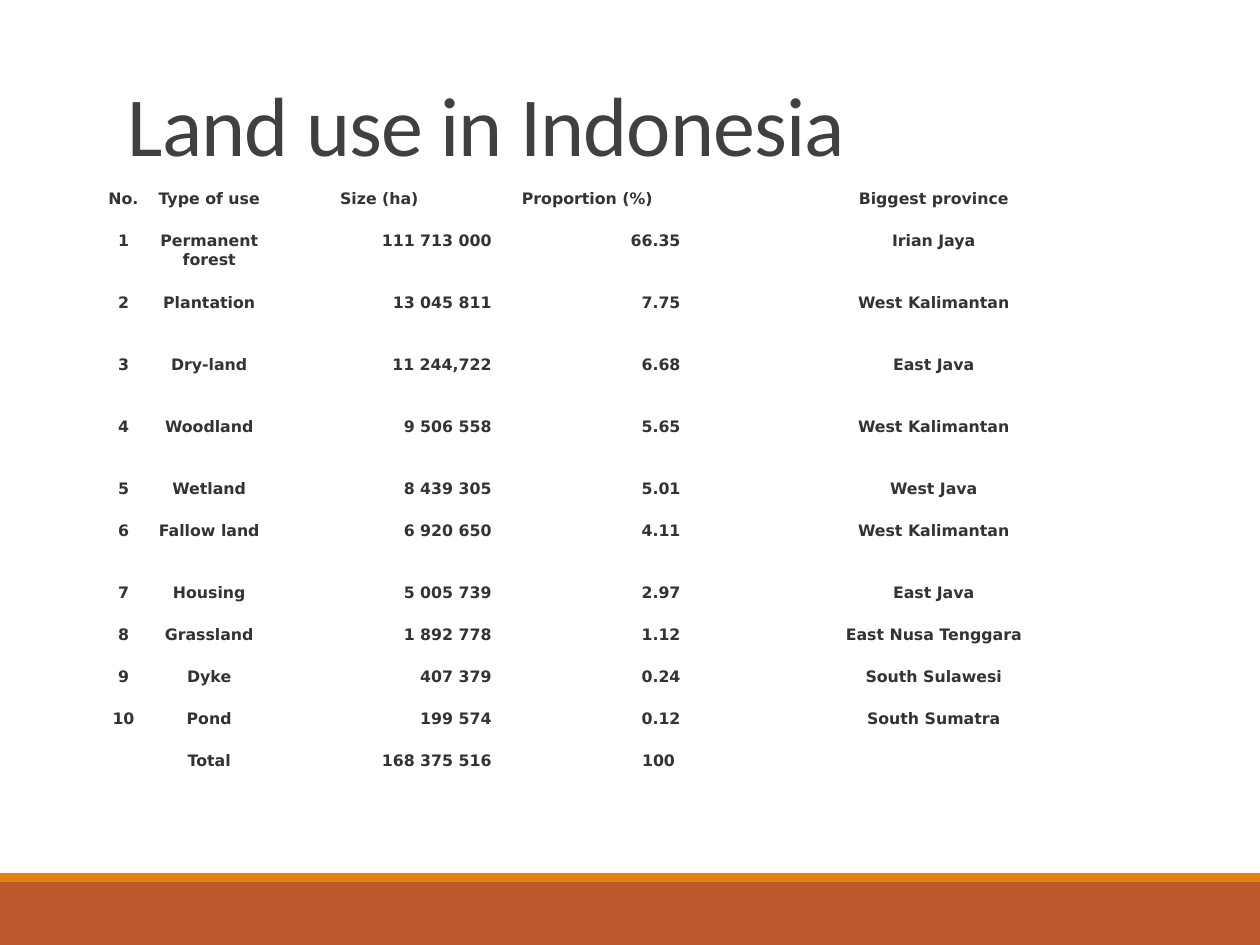
from dataclasses import dataclass

from pptx import Presentation
from pptx.dml.color import RGBColor
from pptx.enum.shapes import MSO_SHAPE
from pptx.enum.text import MSO_ANCHOR, PP_ALIGN
from pptx.util import Pt


@dataclass(frozen=True)
class Theme:
    title_font: str = "Calibri"
    table_font: str = "DejaVu Sans"
    title_size: float = 48
    table_size: float = 9
    title_color: str = "404040"
    table_color: str = "333333"
    cell_fill: str = "FFFFFF"
    band: str = "BD582C"
    stripe: str = "E48312"


THEME = Theme()
WIDTH, HEIGHT = 720, 540

HEADER = ("No.", "Type of use", "Size (ha)", "Proportion (%)", "Biggest province")
LAND_USE = [
    ("1", "Permanent forest", "111 713 000", "66.35", "Irian Jaya"),
    ("2", "Plantation", "13 045 811", "7.75", "West Kalimantan"),
    ("3", "Dry-land", "11 244,722", "6.68", "East Java"),
    ("4", "Woodland", "9 506 558", "5.65", "West Kalimantan"),
    ("5", "Wetland", "8 439 305", "5.01", "West Java"),
    ("6", "Fallow land", "6 920 650", "4.11", "West Kalimantan"),
    ("7", "Housing", "5 005 739", "2.97", "East Java"),
    ("8", "Grassland", "1 892 778", "1.12", "East Nusa Tenggara"),
    ("9", "Dyke", "407 379", "0.24", "South Sulawesi"),
    ("10", "Pond", "199 574", "0.12", "South Sumatra"),
    ("", "Total", "168 375 516", "100 ", ""),
]
COL_WIDTHS = (33.12, 64.8, 129.6, 108, 288)
NUMBER_COLS = (2, 3)
LOW_ROW, TALL_ROW = 24, 35.4
TALL_ROWS = (1, 2, 3, 4, 6, 11)
CELL_INSET = 0.72


def add_run(p, text, font, size, color, bold=False):
    r = p.add_run()
    r.text = text
    r.font.name = font
    r.font.size = Pt(size)
    r.font.bold = bold
    r.font.color.rgb = RGBColor.from_string(color)
    return r


def add_bar(s, top, height, color):
    sp = s.shapes.add_shape(MSO_SHAPE.RECTANGLE, 0, Pt(top), Pt(WIDTH), Pt(height))
    sp.shadow.inherit = False
    sp.fill.solid()
    sp.fill.fore_color.rgb = RGBColor.from_string(color)
    sp.line.fill.background()


def add_title(s, text):
    sp = s.shapes.add_textbox(Pt(66), Pt(-12), Pt(594), Pt(114.5))
    tf = sp.text_frame
    tf.word_wrap = True
    tf.vertical_anchor = MSO_ANCHOR.BOTTOM
    p = tf.paragraphs[0]
    p.line_spacing = 0.85
    r = add_run(p, text, THEME.title_font, THEME.title_size, THEME.title_color)
    r.font._element.set("spc", "-50")  # tighter letters, in 1/100 pt


def fill_cell(cell, text, align):
    cell.fill.solid()
    cell.fill.fore_color.rgb = RGBColor.from_string(THEME.cell_fill)
    cell.margin_left = cell.margin_right = Pt(CELL_INSET)
    cell.margin_top = cell.margin_bottom = Pt(CELL_INSET)
    p = cell.text_frame.paragraphs[0]
    p.alignment = align
    if text:
        add_run(p, text, THEME.table_font, THEME.table_size, THEME.table_color, bold=True)


def add_land_table(s):
    rows = [HEADER, *LAND_USE]
    heights = [TALL_ROW if i in TALL_ROWS else LOW_ROW for i in range(len(rows))]
    table = s.shapes.add_table(len(rows), len(HEADER), Pt(54), Pt(108),
                               Pt(sum(COL_WIDTHS)), Pt(sum(heights))).table
    table.first_row = table.horz_banding = False
    for col, width in zip(table.columns, COL_WIDTHS):
        col.width = Pt(width)
    for i, values in enumerate(rows):
        table.rows[i].height = Pt(heights[i])
        for j, text in enumerate(values):
            is_number = i > 0 and j in NUMBER_COLS
            fill_cell(table.cell(i, j), text,
                      PP_ALIGN.RIGHT if is_number else PP_ALIGN.CENTER)


def main():
    prs = Presentation()
    prs.slide_width, prs.slide_height = Pt(WIDTH), Pt(HEIGHT)
    s = prs.slides.add_slide(prs.slide_layouts[6])

    # Footer bars
    add_bar(s, 504, 36, THEME.band)
    add_bar(s, 499, 5, THEME.stripe)

    # Title and table
    add_title(s, "Land use in Indonesia")
    add_land_table(s)

    prs.save("out.pptx")


if __name__ == "__main__":
    main()
